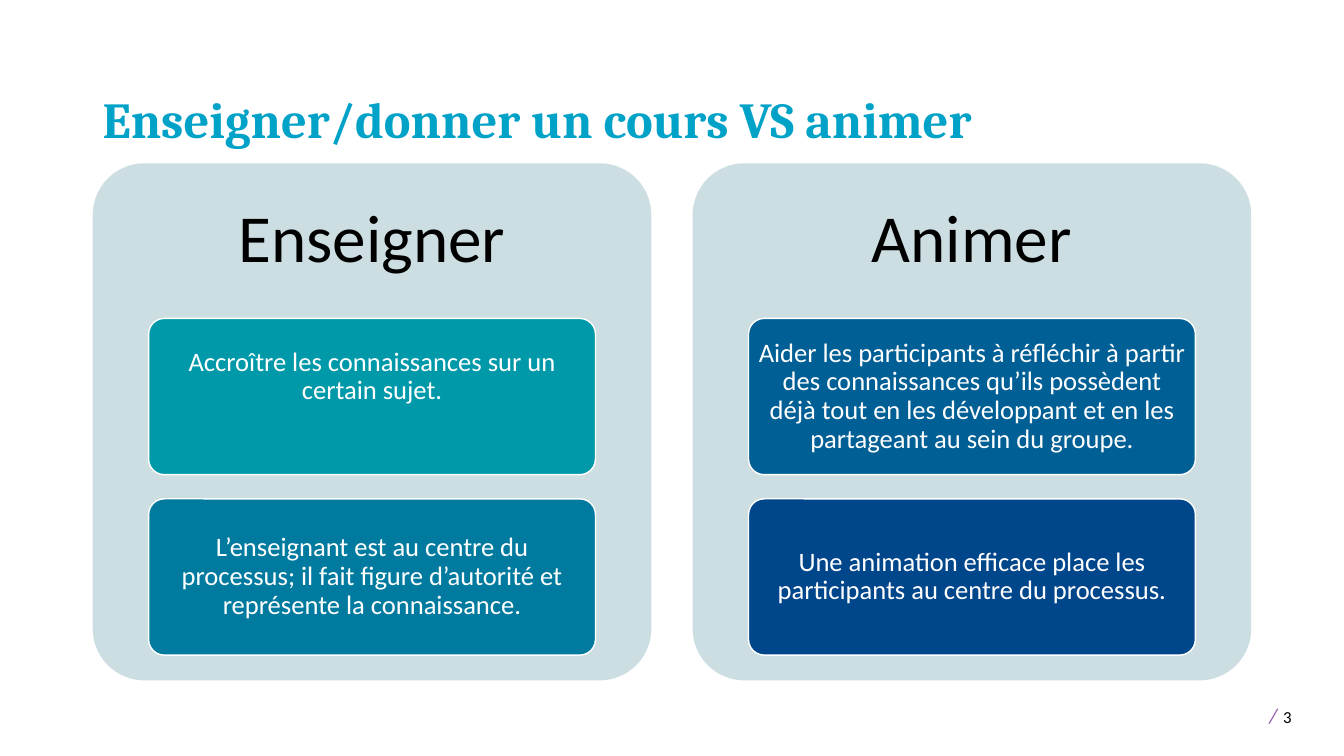
from pptx import Presentation
from pptx.dml.color import RGBColor
from pptx.enum import shapes, text
from pptx.util import Inches, Pt

BLACK = RGBColor(0x00, 0x00, 0x00)
WHITE = RGBColor(0xFF, 0xFF, 0xFF)
PALE = RGBColor(0xCC, 0xDE, 0xE2)
CYAN = RGBColor(0x00, 0xA2, 0xC7)
PURPLE = RGBColor(0x90, 0x53, 0xA1)
TEAL = RGBColor(0x00, 0x99, 0xA9)
OCEAN = RGBColor(0x00, 0x7B, 0x9F)
BLUE = RGBColor(0x00, 0x5F, 0x95)
NAVY = RGBColor(0x00, 0x46, 0x8B)

MID = text.MSO_ANCHOR.MIDDLE
CENTER = text.PP_ALIGN.CENTER

# Heading, then each card as wording, fill and bottom inset
PANELS = [
    ("Enseigner", [
        ("Accroître les connaissances sur un certain sujet.", TEAL, 0.43),
        ("L’enseignant est au centre du processus; il fait figure "
         "d’autorité et représente la connaissance.", OCEAN, 0.04)]),
    ("Animer", [
        ("Aider les participants à réfléchir à partir des connaissances "
         "qu’ils possèdent déjà tout en les développant et en les "
         "partageant au sein du groupe.", BLUE, 0.04),
        ("Une animation efficace place les participants au centre du "
         "processus.", NAVY, 0.04)]),
]


def place(x, y, w, h):
    return [Inches(n) for n in (x, y, w, h)]


def write(shape, runs, anchor, align=None, inset=(0.1, 0.05, 0.1, 0.05)):
    """Fill a shape with one paragraph of (wording, format) runs."""
    frame = shape.text_frame
    frame.word_wrap = True
    frame.vertical_anchor = anchor
    for side, gap in zip(("left", "top", "right", "bottom"), inset):
        setattr(frame, "margin_" + side, Inches(gap))
    para = frame.paragraphs[0]
    para.alignment = align
    para.line_spacing = 0.9
    for words, style in runs:
        run = para.add_run()
        run.text = words
        look = {"name": "Calibri", **style}
        run.font.color.rgb = look.pop("color")
        for key, value in look.items():
            setattr(run.font, key, value)


def block(slide, box, fill, line=None):
    shape = slide.shapes.add_shape(
        shapes.MSO_SHAPE.ROUNDED_RECTANGLE, *place(*box))
    shape.adjustments[0] = 0.1
    shape.shadow.inherit = False
    shape.fill.solid()
    shape.fill.fore_color.rgb = fill
    if line is None:
        shape.line.fill.background()
    else:
        shape.line.color.rgb = line
        shape.line.width = Pt(1)
    return shape


def title(slide, box):
    shape = slide.shapes.add_textbox(*place(*box))
    style = {"name": "Cambria", "size": Pt(36), "bold": True, "color": CYAN}
    write(shape, [("Enseigner/donner un cours VS animer", style)],
          text.MSO_ANCHOR.BOTTOM)


def panel(slide, box, head, cards):
    x, y, w, h = box
    block(slide, box, PALE)
    # Heading in the top three tenths
    top = slide.shapes.add_textbox(*place(x, y, w, 0.3 * h))
    write(top, [(head, {"size": Pt(48), "color": BLACK})],
          MID, CENTER, (0.2,) * 4)
    # Stacked cards, four fifths of the panel wide
    for i, (words, fill, low) in enumerate(cards):
        spot = (x + 0.1 * w, y + 0.3 * h + 1.79 * i, 0.8 * w, 1.55)
        card = block(slide, spot, fill, WHITE)
        write(card, [(words, {"size": Pt(19), "color": WHITE})],
              MID, CENTER, (0.05, 0.04, 0.05, low))


def footer(slide, box):
    shape = slide.shapes.add_textbox(*place(*box))
    runs = [("/", {"size": Pt(15), "italic": True, "color": PURPLE}),
            (" ", {"size": Pt(18), "color": BLACK}),
            ("3", {"size": Pt(12), "color": BLACK})]
    write(shape, runs, text.MSO_ANCHOR.TOP, inset=(0.16, 0.08, 0.1, 0.05))


def main():
    deck = Presentation()
    deck.slide_width, deck.slide_height = Inches(13.33), Inches(7.5)
    slide = deck.slides.add_slide(deck.slide_layouts[6])
    footer(slide, (12.43, 6.88, 0.87, 0.4))
    for i, (head, cards) in enumerate(PANELS):
        panel(slide, (0.92 + 5.95 * i, 1.62, 5.54, 5.13), head, cards)
    title(slide, (0.92, 0.4, 11.5, 1.13))
    deck.save("out.pptx")


if __name__ == "__main__":
    main()
